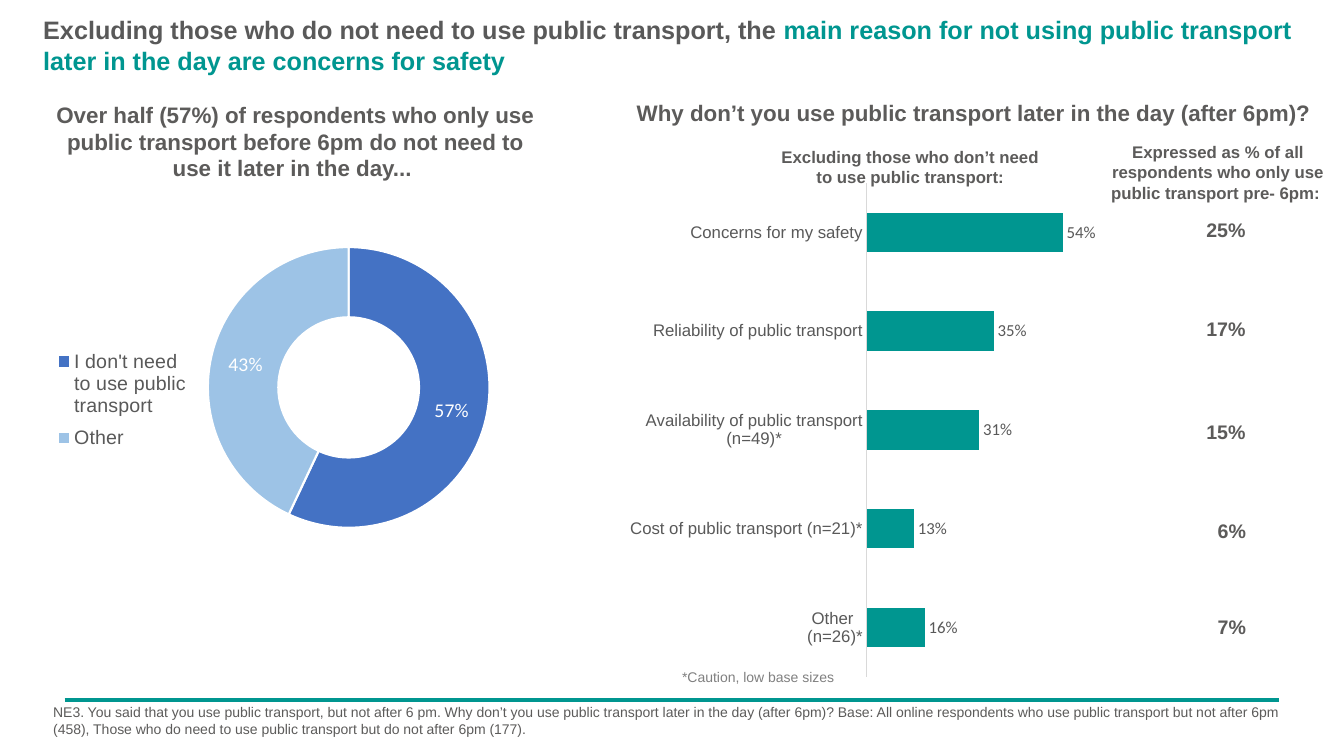
"""Build the slide on reasons for not using public transport after 6pm."""
from dataclasses import dataclass
from typing import Any

from lxml import etree
from pptx import Presentation
from pptx.chart.data import CategoryChartData
from pptx.dml.color import RGBColor
from pptx.enum.chart import XL_CHART_TYPE as ChartType
from pptx.enum.chart import XL_LABEL_POSITION as LabelPosition
from pptx.enum.chart import XL_LEGEND_POSITION as LegendPosition
from pptx.enum.chart import XL_TICK_MARK as TickMark
from pptx.enum.shapes import MSO_CONNECTOR as Connector
from pptx.enum.text import MSO_ANCHOR as Anchor
from pptx.enum.text import MSO_AUTO_SIZE as AutoSize
from pptx.enum.text import PP_ALIGN as Align
from pptx.oxml.ns import qn
from pptx.util import Cm, Pt

TEAL, GREY, TEXT_GREY, PALE_GREY = "009690", "595959", "5C5B5A", "808080"
BLUE, LIGHT_BLUE, AXIS_GREY, WHITE = "4472C4", "9DC3E6", "D9D9D9", "FFFFFF"


@dataclass(frozen=True)
class Box:
    left: float
    top: float
    width: float
    height: float

    def lengths(self) -> tuple[Cm, Cm, Cm, Cm]:
        return Cm(self.left), Cm(self.top), Cm(self.width), Cm(self.height)


@dataclass(frozen=True)
class Run:
    text: str
    color: str = TEXT_GREY


@dataclass(frozen=True)
class Label:
    box: Box
    runs: tuple[Run, ...]
    size: int
    bold: bool = True
    align: Align = Align.CENTER
    anchor: Anchor = Anchor.TOP
    inset: bool = False
    grow: bool = True


@dataclass(frozen=True)
class ChartPlan:
    box: Box
    kind: ChartType
    values: dict[str, float]
    colors: tuple[str, ...]
    label_size: int
    label_color: str
    plot: Box


def color_of(code: str) -> RGBColor:
    return RGBColor.from_string(code)


def apply(target: Any, formats: dict[str, Any]) -> None:
    for name, value in formats.items():
        setattr(target, name, value)


def style_font(font: Any, size: int, color: str, bold: bool = False, name: str = "Arial") -> None:
    apply(font, {"size": Pt(size), "bold": bold, "name": name})
    font.color.rgb = color_of(color)


def add_label(slide: Any, label: Label) -> None:
    frame = slide.shapes.add_textbox(*label.box.lengths()).text_frame
    apply(frame, {
        "word_wrap": True,
        "vertical_anchor": label.anchor,
        "auto_size": AutoSize.SHAPE_TO_FIT_TEXT if label.grow else AutoSize.NONE,
    })
    if not label.inset:
        sides = ("left", "top", "right", "bottom")
        apply(frame, {f"margin_{side}": 0 for side in sides})
    paragraph = frame.paragraphs[0]
    paragraph.alignment = label.align
    for part in label.runs:
        run = paragraph.add_run()
        run.text = part.text
        style_font(run.font, label.size, part.color, label.bold)


def set_layout(parent: Any, box: Box, after: str | None, inner: bool = False) -> None:
    for old in parent.findall(qn("c:layout")):
        parent.remove(old)
    layout = etree.Element(qn("c:layout"))
    manual = etree.SubElement(layout, qn("c:manualLayout"))
    settings = {"layoutTarget": "inner"} if inner else {}
    settings |= {"xMode": "edge", "yMode": "edge", "x": box.left, "y": box.top,
                 "w": box.width, "h": box.height}
    for tag, value in settings.items():
        etree.SubElement(manual, qn(f"c:{tag}")).set("val", str(value))
    parent.insert(0 if after is None else parent.index(parent.find(qn(after))) + 1, layout)


def add_chart(slide: Any, plan: ChartPlan) -> Any:
    data = CategoryChartData(number_format="0%")
    data.categories = list(plan.values)
    data.add_series("Series 1", list(plan.values.values()))
    chart = slide.shapes.add_chart(plan.kind, *plan.box.lengths(), data).chart
    apply(chart, {"has_title": False, "has_legend": False})
    style_font(chart.font, 10, "000000", name="Calibri")
    plot = chart.plots[0]
    plot.has_data_labels = True
    labels = plot.data_labels
    apply(labels, {"show_value": True, "show_percentage": False,
                   "number_format": "0%", "number_format_is_linked": False})
    style_font(labels.font, plan.label_size, plan.label_color, name="Calibri")
    series = plot.series[0]
    if len(plan.colors) == 1:
        plot.vary_by_categories = False
        series.format.fill.solid()
        series.format.fill.fore_color.rgb = color_of(plan.colors[0])
    else:
        for index, code in enumerate(plan.colors):
            style = series.points[index].format
            style.fill.solid()
            style.fill.fore_color.rgb = color_of(code)
            style.line.color.rgb = color_of(WHITE)
            style.line.width = Pt(1.5)
    plot_area = chart.element.find(f".//{qn('c:plotArea')}")
    set_layout(plot_area, plan.plot, None, inner=True)
    return chart


def add_need_doughnut(slide: Any) -> None:
    chart = add_chart(slide, ChartPlan(
        Box(1.07, 6.2, 12.55, 7.8), ChartType.DOUGHNUT,
        {"I don't need to use public transport ": 0.57, "Other ": 0.43},
        (BLUE, LIGHT_BLUE), 14, WHITE, Box(0.33, 0, 0.57, 0.91)))
    chart.has_legend = True
    apply(chart.legend, {"position": LegendPosition.LEFT, "include_in_layout": False})
    style_font(chart.legend.font, 14, GREY)
    set_layout(chart.legend._element, Box(0.02, 0.3, 0.28, 0.39), "c:legendPos")
    chart.element.find(f".//{qn('c:holeSize')}").set("val", "55")


def add_reason_bars(slide: Any) -> None:
    chart = add_chart(slide, ChartPlan(
        Box(15.88, 4.6, 14.86, 12.47), ChartType.BAR_CLUSTERED,
        {"Other\n (n=26)*": 0.16, "Cost of public transport (n=21)*": 0.13,
         "Availability of public transport (n=49)*": 0.31,
         "Reliability of public transport": 0.35, "Concerns for my safety": 0.54},
        (TEAL,), 12, GREY, Box(0.4, 0, 0.37, 1)))
    chart.plots[0].gap_width = 150
    chart.plots[0].data_labels.position = LabelPosition.OUTSIDE_END
    apply(chart.value_axis, {"visible": False, "has_major_gridlines": False,
                             "minimum_scale": 0, "maximum_scale": 0.6})
    axis = chart.category_axis
    apply(axis, {"major_tick_mark": TickMark.NONE, "minor_tick_mark": TickMark.NONE})
    style_font(axis.tick_labels.font, 12, GREY)
    axis.format.line.color.rgb = color_of(AXIS_GREY)
    axis.format.line.width = Pt(0.75)


def add_footer_rule(slide: Any) -> None:
    rule = slide.shapes.add_connector(Connector.STRAIGHT, Cm(1.63), Cm(17.63), Cm(32.23), Cm(17.63))
    rule.line.color.rgb = color_of(TEAL)
    rule.line.width = Pt(3)
    etree.SubElement(rule._element.spPr, qn("a:effectLst"))


LABELS = (
    Label(Box(1.09, 0.36, 31.72, 1.55), (
        Run("Excluding those who do not need to use public transport, the ", GREY),
        Run("main reason for not using public transport later in the day are concerns for safety", TEAL),
    ), 18, align=Align.LEFT, anchor=Anchor.MIDDLE),
    Label(Box(1.17, 2.54, 12.55, 2.06), (Run("Over half (57%) of respondents who only use public transport before 6pm do not need to use it later in the day... "),), 16),
    Label(Box(15.88, 2.51, 17.32, 0.69), (Run("Why don’t you use public transport later in the day (after 6pm)?"),), 16),
    Label(Box(19.41, 3.58, 7.06, 1.27), (Run("Excluding those who don’t need to use public transport:"),), 12, inset=True),
    Label(Box(27.71, 3.58, 5.97, 1.55), (Run("Expressed as % of all respondents who only use public transport pre- 6pm: "),), 12),
    Label(Box(1.09, 17.6, 32.08, 1.42), (Run("NE3. You said that you use public transport, but not after 6 pm. Why don’t you use public transport later in the day (after 6pm)? Base: All online respondents who use public transport but not after 6pm (458), Those who do need to use public transport but do not after 6pm (177). "),), 10, bold=False, align=Align.LEFT, inset=True, grow=False),
    Label(Box(16.94, 16.71, 4.93, 0.69), (Run("*Caution, low base sizes", PALE_GREY),), 10, bold=False, align=Align.LEFT, inset=True),
)
SHARES = (("25% ", 29.72, 5.49), ("17% ", 29.72, 7.98), ("15% ", 29.72, 10.59),
          ("6% ", 29.87, 13.08), ("7% ", 29.87, 15.49))


def main() -> None:
    presentation = Presentation()
    apply(presentation, {"slide_width": Cm(33.87), "slide_height": Cm(19.05)})
    slide = presentation.slides.add_slide(presentation.slide_layouts[6])
    add_footer_rule(slide)
    add_need_doughnut(slide)
    add_reason_bars(slide)
    shares = tuple(Label(Box(left, top, 2.49, 0.61), (Run(text),), 14) for text, left, top in SHARES)
    for label in LABELS + shares:
        add_label(slide, label)
    presentation.save("out.pptx")


if __name__ == "__main__":
    main()
